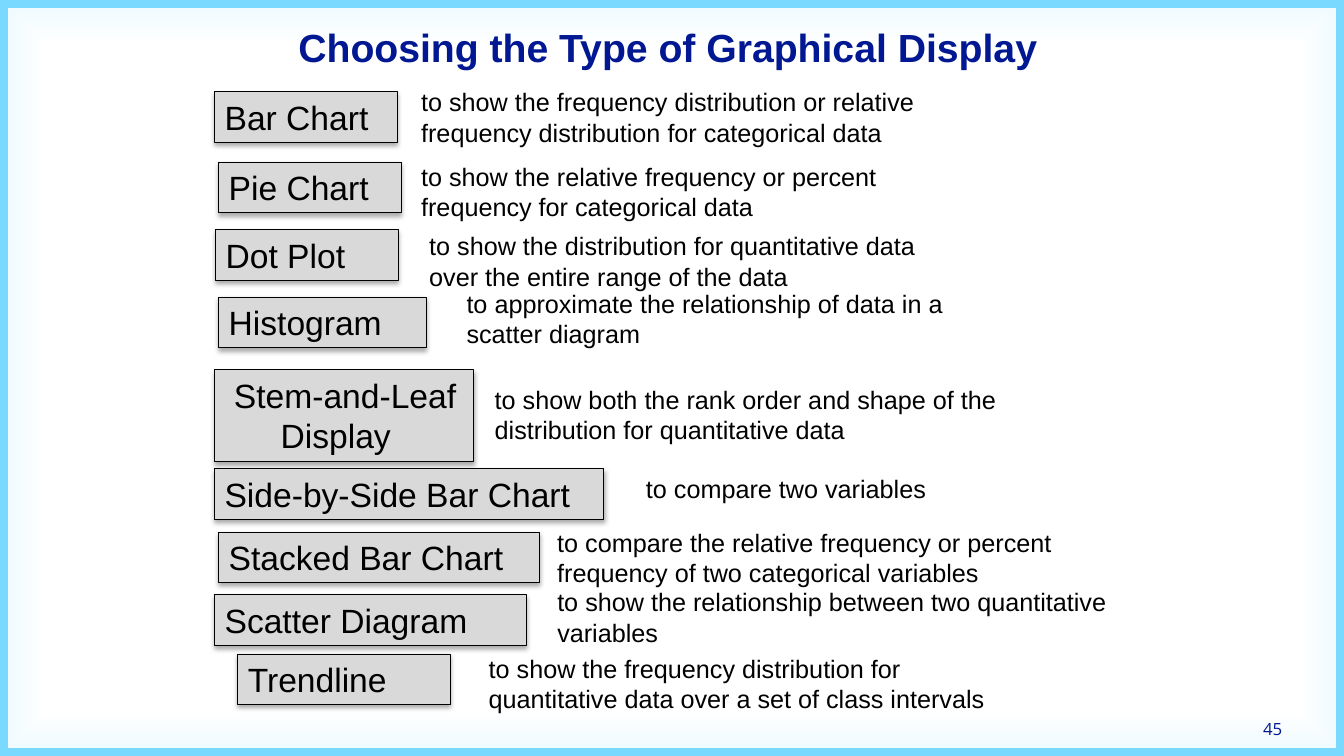
from pptx import Presentation
from pptx.dml.color import RGBColor
from pptx.enum.shapes import MSO_SHAPE
from pptx.enum.text import MSO_ANCHOR as ANCHOR, MSO_AUTO_SIZE as AUTO_SIZE, PP_ALIGN as ALIGN
from pptx.oxml import parse_xml
from pptx.oxml.ns import nsdecls, qn
from pptx.util import Inches, Pt

# Grid of tenths of an inch
COLUMNS, ROWS = 133.33, 75
CELL = Inches(0.1)

NAVY, BLACK, GREY = "011892", "000000", "D9D9D9"
GLOW_STOPS = [(0, "FFFFFF"), (88, "FFFFFF"), (98, "F0FBFF"), (98, "79D9FF"),
              (100, "79D9FF"), (100, "A6E6FF")]

TITLE = {"size": Pt(28), "name": "Arial", "bold": True}
LABEL = {"size": Pt(24), "name": "Arial", "bold": False}
PURPOSE = {"size": Pt(18), "name": "Arial", "bold": False}
NUMBER = {"size": Pt(12), "name": "Open Sans", "bold": False}

# Label, its left, top, width and height; purpose, its left, top, width and height, wrapping
DISPLAYS = [
    ("Bar Chart", (21.3, 9.1, 18.1, 5),
     "to show the frequency distribution or relative\nfrequency distribution for categorical data",
     (40.8, 8.1, 51.4, 7.1), False),
    ("Pie Chart", (21.7, 16.1, 18.1, 5),
     "to show the relative frequency or percent\nfrequency for categorical data",
     (40.8, 15.5, 47.6, 7.1), False),
    ("Dot Plot", (21.4, 22.8, 18.1, 5),
     "to show the distribution for quantitative data\nover the entire range of the data",
     (41.6, 22.4, 50.7, 7.1), False),
    ("Histogram", (21.7, 29.5, 20.6, 5),
     "to approximate the relationship of data in a\nscatter diagram",
     (45.3, 28.1, 49.7, 7.1), False),
    ("Stem-and-Leaf\nDisplay", (21.3, 36.7, 25.7, 9.1),
     "to show both the rank order and shape of the distribution for quantitative data",
     (48.1, 37.6, 62.4, 7.1), True),
    ("Side-by-Side Bar Chart", (21.3, 46.5, 38.6, 5),
     "to compare two variables",
     (63.1, 46.5, 30.1, 4), False),
    ("Stacked Bar Chart", (21.7, 52.8, 31.8, 5),
     "to compare the relative frequency or percent frequency of two categorical variables",
     (54.3, 51.8, 58.4, 7.1), True),
    ("Scatter Diagram", (21.3, 59, 30.9, 5),
     "to show the relationship between two quantitative variables",
     (54.3, 57.7, 63.1, 7.1), True),
    ("Trendline", (23.6, 64.9, 21.1, 5),
     "to show the frequency distribution for\nquantitative data over a set of class intervals",
     (47.5, 64.3, 70, 7.1), True),
]
LINE_INDENTS = {"Stem-and-Leaf": 0.93, "Display": 5.56}


def color(value):
    return RGBColor.from_string(value)


def cells(count):
    return round(count * CELL)


class SlideBuilder:
    def __init__(self, slide):
        self.slide = slide

    def background(self, stops):
        marks = "".join(f'<a:gs pos="{place * 1000}"><a:srgbClr val="{value}"/></a:gs>'
                        for place, value in stops)
        fill = (f'<a:gradFill rotWithShape="1"><a:gsLst>{marks}</a:gsLst><a:path path="shape">'
                '<a:fillToRect l="50000" t="50000" r="50000" b="50000"/></a:path></a:gradFill>')
        self.slide.element[0].insert(0, parse_xml(
            f'<p:bg {nsdecls("p", "a")}><p:bgPr>{fill}<a:effectLst/></p:bgPr></p:bg>'))

    def set_text(self, shape, text, style, ink=BLACK, **frame_format):
        frame = shape.text_frame
        frame.text = text
        for name, value in frame_format.items():
            setattr(frame, name, value)
        for paragraph in frame.paragraphs:
            paragraph.alignment = ALIGN.LEFT
            indent = LINE_INDENTS.get(paragraph.text)
            if indent:
                paragraph._p.get_or_add_pPr().set("marL", str(cells(indent)))
            for name, value in style.items():
                setattr(paragraph.runs[0].font, name, value)
            paragraph.runs[0].font.color.rgb = color(ink)

    def title(self, text, place):
        shape = self.slide.shapes.title
        for name, value in zip(("left", "top", "width", "height"), place):
            setattr(shape, name, cells(value))
        self.set_text(shape, text, TITLE, NAVY, vertical_anchor=ANCHOR.MIDDLE,
                      auto_size=AUTO_SIZE.NONE, word_wrap=True)

    def text(self, text, place, style=PURPOSE, ink=BLACK, **frame_format):
        shape = self.slide.shapes.add_textbox(*map(cells, place))
        self.set_text(shape, text, style, ink, auto_size=AUTO_SIZE.SHAPE_TO_FIT_TEXT,
                      **frame_format)

    def label(self, text, place):
        shape = self.slide.shapes.add_shape(MSO_SHAPE.RECTANGLE, *map(cells, place))
        shape.fill.solid()
        shape.fill.fore_color.rgb = color(GREY)
        shape.line.color.rgb = color(BLACK)
        shape.line.width = Pt(0.75)
        shape.shadow.inherit = False
        shape.element.spPr.find(qn("a:effectLst")).append(parse_xml(
            f'<a:outerShdw {nsdecls("a")} blurRad="{Pt(3.5)}" dist="{Pt(2.2)}" dir="5400000" '
            f'rotWithShape="0"><a:srgbClr val="{BLACK}"><a:alpha val="32000"/></a:srgbClr>'
            '</a:outerShdw>'))
        self.set_text(shape, text, LABEL, vertical_anchor=ANCHOR.TOP, word_wrap=True,
                      auto_size=AUTO_SIZE.SHAPE_TO_FIT_TEXT)


def main():
    presentation = Presentation()
    presentation.slide_width = cells(COLUMNS)
    presentation.slide_height = cells(ROWS)
    builder = SlideBuilder(presentation.slides.add_slide(presentation.slide_layouts[5]))

    # Frame and title
    builder.background(GLOW_STOPS)
    builder.title("Choosing the Type of Graphical Display", (28.6, 0.2, 85, 8.9))

    # Each display with its purpose
    for name, label_place, purpose, purpose_place, wraps in DISPLAYS:
        builder.label(name, label_place)
        builder.text(purpose, purpose_place, word_wrap=wraps)

    # Slide number
    builder.text("45", (125.3, 71.3, 6, 2.5), NUMBER, NAVY, word_wrap=True,
                 vertical_anchor=ANCHOR.BOTTOM, margin_left=0, margin_top=0,
                 margin_right=0, margin_bottom=cells(0.5))

    presentation.save("out.pptx")


if __name__ == "__main__":
    main()
